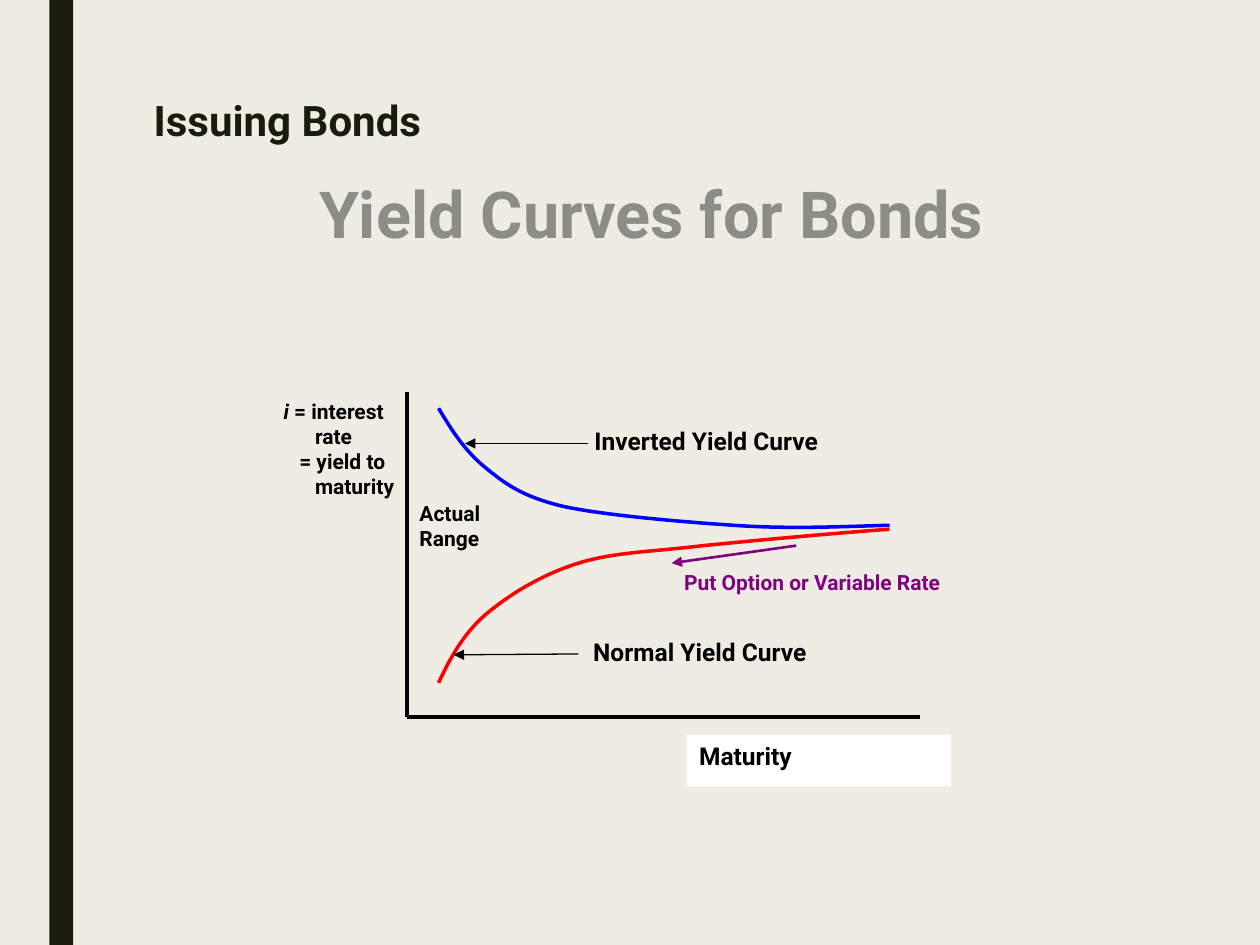
from lxml import etree
from pptx import Presentation
from pptx.dml.color import RGBColor
from pptx.enum.shapes import MSO_CONNECTOR, MSO_SHAPE
from pptx.enum.text import MSO_ANCHOR, MSO_AUTO_SIZE, PP_ALIGN
from pptx.oxml.ns import qn
from pptx.util import Pt

STRAIGHT = MSO_CONNECTOR.STRAIGHT
RECTANGLE = MSO_SHAPE.RECTANGLE
TOP = MSO_ANCHOR.TOP
NO_AUTOFIT = MSO_AUTO_SIZE.NONE
LEFT, CENTER = PP_ALIGN.LEFT, PP_ALIGN.CENTER

FONT = "Roboto"
BACKGROUND, DARK, GREY = "EFEDE3", "191B0E", "8C8D86"
BLACK, WHITE = "000000", "FFFFFF"
RED, BLUE, PURPLE = "FF0000", "0000FF", "800080"
CURVE_STEPS = 16

# Each curve is a start point followed by cubic Bezier triples.
NORMAL_CURVE = [
    (88.6, 166.2),
    (95, 152.6), (102.2, 138.9), (115.2, 127.4),
    (128.9, 115.8), (147.6, 104.3), (168.5, 97.8),
    (189.4, 91.4), (210.2, 91.4), (239.8, 87.8),
    (269.3, 84.9), (307.4, 81.3), (346.3, 78.4),
]
INVERTED_CURVE = [
    (88.6, 9.3),
    (95.8, 21.5), (103.7, 33.8), (115.2, 43.1),
    (126.7, 52.5), (136.1, 59.7), (159.8, 65.4),
    (183.6, 70.5), (226.1, 74.1), (257, 76.2),
    (288, 78.4), (317.5, 77), (346.3, 76.2),
]


def color(value):
    return RGBColor.from_string(value)


def set_attributes(target, values):
    for name, value in values.items():
        setattr(target, name, value)


def add_run(paragraph, text, size, text_color, italic=False):
    run = paragraph.add_run()
    run.text = text
    set_attributes(run.font, {"name": FONT, "size": Pt(size), "bold": True, "italic": italic})
    run.font.color.rgb = color(text_color)


def fill_placeholder(shape, box, text, size, text_color, paragraph_format):
    """Move a placeholder to the box and give it one formatted paragraph."""
    set_attributes(shape, dict(zip(("left", "top", "width", "height"), map(Pt, box))))
    frame = shape.text_frame
    set_attributes(frame, {"vertical_anchor": TOP, "auto_size": NO_AUTOFIT, "word_wrap": True})
    paragraph = frame.paragraphs[0]
    set_attributes(paragraph, paragraph_format)
    add_run(paragraph, text, size, text_color)
    return paragraph


def add_title(slide, box):
    fill_placeholder(slide.shapes.title, box, "Issuing Bonds", 24, DARK,
                     {"alignment": LEFT, "line_spacing": 0.89})


def add_subject(slide, box):
    paragraph = fill_placeholder(
        slide.placeholders[1], box, "Yield Curves for Bonds", 37, GREY,
        {"alignment": CENTER, "line_spacing": 0.94,
         "space_before": Pt(10), "space_after": Pt(2)})
    properties = paragraph._p.get_or_add_pPr()
    properties.set("marL", str(Pt(30)))
    properties.set("indent", str(-Pt(30)))
    etree.SubElement(properties, qn("a:buNone"))


def add_side_bar(slide, box):
    bar = slide.shapes.add_shape(RECTANGLE, *map(Pt, box))
    bar.shadow.inherit = False
    bar.fill.solid()
    bar.fill.fore_color.rgb = color(DARK)
    bar.line.fill.background()


def add_line(shapes, start, end, line_color, width, arrow=False):
    line = shapes.add_connector(STRAIGHT, *map(Pt, start + end))
    line.line.color.rgb = color(line_color)
    line.line.width = Pt(width)
    if arrow:
        etree.SubElement(line.line._get_or_add_ln(), qn("a:tailEnd"), type="triangle")
    etree.SubElement(line._element.spPr, qn("a:effectLst"))


def bezier_points(points):
    """Sample the cubic segments at equal steps."""
    for index in range(0, len(points) - 1, 3):
        segment = points[index:index + 4]
        for step in range(1, CURVE_STEPS + 1):
            t = step / CURVE_STEPS
            weights = ((1 - t) ** 3, 3 * t * (1 - t) ** 2, 3 * t * t * (1 - t), t ** 3)
            yield tuple(Pt(sum(weight * point[axis] for weight, point in zip(weights, segment)))
                        for axis in (0, 1))


def add_curve(shapes, points, line_color):
    builder = shapes.build_freeform(*map(Pt, points[0]))
    builder.add_line_segments(list(bezier_points(points)), close=False)
    curve = builder.convert_to_shape()
    curve.shadow.inherit = False
    curve.fill.background()
    curve.line.color.rgb = color(line_color)
    curve.line.width = Pt(2)


def add_label(shapes, box, lines, size, text_color=BLACK, fill=None):
    if fill:
        label = shapes.add_shape(RECTANGLE, *map(Pt, box))
        label.shadow.inherit = False
        label.fill.solid()
        label.fill.fore_color.rgb = color(fill)
        label.line.fill.background()
    else:
        label = shapes.add_textbox(*map(Pt, box))
    frame = label.text_frame
    set_attributes(frame, {"word_wrap": True, "vertical_anchor": TOP})
    for index, text in enumerate(lines):
        paragraph = frame.add_paragraph() if index else frame.paragraphs[0]
        paragraph.alignment = LEFT
        add_run(paragraph, text, size, text_color)


def add_rate_label(shapes, box):
    """Label of the vertical axis, with stepped indents."""
    frame = shapes.add_textbox(*map(Pt, box)).text_frame
    set_attributes(frame, {"word_wrap": True, "margin_left": 0, "margin_right": 0})
    paragraph = frame.paragraphs[0]
    add_run(paragraph, "i", 12, BLACK, italic=True)
    add_run(paragraph, " = interest", 12, BLACK)
    for text, indent in (("rate", 18), ("= yield to", 9), ("maturity", 18)):
        paragraph = frame.add_paragraph()
        paragraph._p.get_or_add_pPr().set("marL", str(Pt(indent)))
        add_run(paragraph, text, 12, BLACK)


def add_yield_diagram(slide, box):
    left, top, width, height = box
    shapes = slide.shapes.add_group_shape().shapes

    def at(x, y):
        return left + x, top + y

    def place(points):
        return [at(*point) for point in points]

    axis_x, axis_y = 70.6, height
    add_line(shapes, at(axis_x, 0), at(axis_x, axis_y), BLACK, 2)
    add_line(shapes, at(axis_x, axis_y), at(width, axis_y), BLACK, 2)
    add_rate_label(shapes, at(0, 0) + (71.3, 88.6))
    add_curve(shapes, place(NORMAL_CURVE), RED)
    add_curve(shapes, place(INVERTED_CURVE), BLUE)

    for start, end, line_color, line_width in (
            ((168.5, 149.7), (97.2, 150.2), BLACK, 0.75),
            ((174.2, 29.4), (103.7, 29.4), BLACK, 0.75),
            ((293, 87.8), (221.8, 97.8), PURPLE, 1.5)):
        add_line(shapes, at(*start), at(*end), line_color, line_width, arrow=True)

    for position, size, lines, *style in (
            ((170.6, 15.8), (151.2, 38.9), ["Inverted Yield Curve"], 14),
            ((169.9, 136.7), (151.2, 38.9), ["Normal Yield Curve"], 14),
            ((230.4, 195.8), (151.2, 29.5), ["Maturity"], 14, BLACK, WHITE),
            ((221.8, 97.8), (168.5, 29.5), ["Put Option or Variable Rate"], 12, PURPLE),
            ((axis_x, 58.2), (151.2, 49), ["Actual", "Range"], 12)):
        add_label(shapes, at(*position) + size, lines, *style)


def main():
    presentation = Presentation()
    presentation.slide_width, presentation.slide_height = Pt(720), Pt(540)
    slide = presentation.slides.add_slide(presentation.slide_layouts[1])
    slide.background.fill.solid()
    slide.background.fill.fore_color.rgb = color(BACKGROUND)
    add_side_bar(slide, (28.2, 0, 13.6, 540))
    add_title(slide, (80.6, 54, 567.4, 116.6))
    add_subject(slide, (48.2, 99.4, 648, 392.4))
    add_yield_diagram(slide, (162, 224, 363.6, 185.7))
    presentation.save("out.pptx")


if __name__ == "__main__":
    main()
